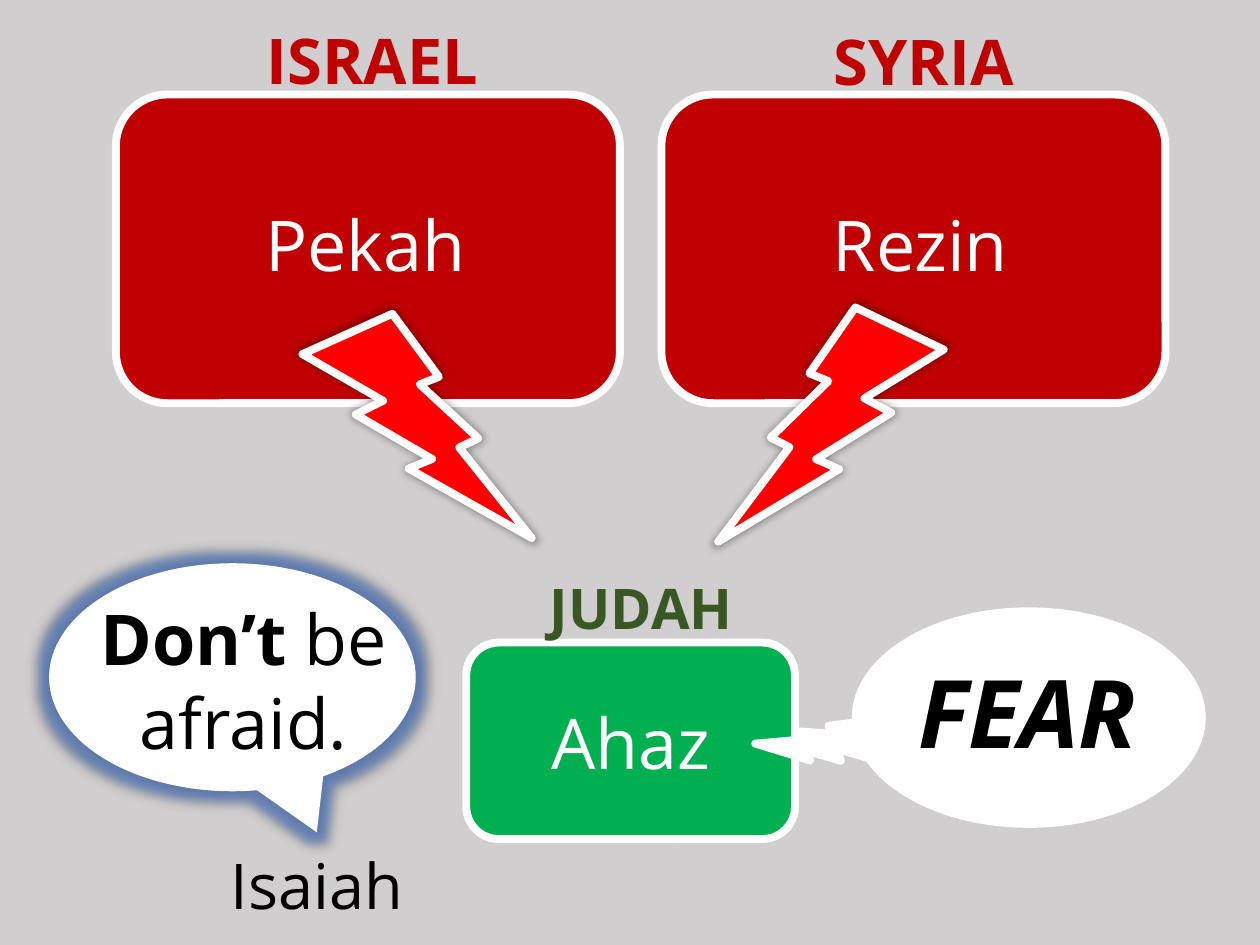
import pptx
import pptx.util
import pptx.dml.color
import pptx.enum.shapes
import pptx.enum.text
import pptx.oxml
import pptx.oxml.ns
from dataclasses import dataclass

Inches = pptx.util.Inches
Pt = pptx.util.Pt
SHAPE = pptx.enum.shapes.MSO_SHAPE


@dataclass(frozen=True)
class Theme:
    font: str = "Open Sans"
    backdrop: str = "D0CECE"
    white: str = "FFFFFF"
    black: str = "000000"
    enemy: str = "C00000"
    bolt: str = "FF0000"
    judah: str = "00B050"
    judah_title: str = "385723"
    glow: str = "4472C4"
    border: float = 4.5
    small: int = 32
    label: int = 36
    name: int = 40
    shout: int = 54


def rgb(value):
    return pptx.dml.color.RGBColor.from_string(value)


def add_run(p, text, *, font, size, color, bold=False, italic=False):
    r = p.add_run()
    r.text = text
    r.font.name = font
    r.font.size = Pt(size)
    r.font.color.rgb = rgb(color)
    r.font.bold = bold
    r.font.italic = italic
    return r


class Board:
    def __init__(self, slide, theme):
        self.slide = slide
        self.theme = theme
        self.shapes = slide.shapes

    def start_group(self):
        self.shapes = self.slide.shapes.add_group_shape().shapes

    def end_group(self):
        self.shapes = self.slide.shapes

    def shape(self, kind, box, fill, border=False, flip=False, rotation=0):
        sp = self.shapes.add_shape(kind, *map(Inches, box))
        sp.shadow.inherit = False
        sp.fill.solid()
        sp.fill.fore_color.rgb = rgb(fill)
        if border:
            sp.line.color.rgb = rgb(self.theme.white)
            sp.line.width = Pt(self.theme.border)
        else:
            sp.line.fill.background()
        sp.rotation = rotation
        if flip:
            sp.element.spPr.find(pptx.oxml.ns.qn("a:xfrm")).set("flipH", "1")
        return sp

    def text(self, box, runs, size, color):
        tf = self.shapes.add_textbox(*map(Inches, box)).text_frame
        tf.word_wrap = True
        tf.auto_size = pptx.enum.text.MSO_AUTO_SIZE.SHAPE_TO_FIT_TEXT
        p = tf.paragraphs[0]
        p.alignment = pptx.enum.text.PP_ALIGN.CENTER
        for text, style in runs:
            add_run(p, text, font=self.theme.font, size=size, color=color, **style)

    def effect(self, sp, tag, color, alpha, **attributes):
        effects = sp.element.spPr.find(pptx.oxml.ns.qn("a:effectLst"))
        settings = " ".join(f'{key}="{value}"' for key, value in attributes.items())
        effects.append(pptx.oxml.parse_xml(
            f'<a:{tag} {pptx.oxml.ns.nsdecls("a")} {settings}>'
            f'<a:srgbClr val="{color}"><a:alpha val="{alpha * 1000}"/></a:srgbClr>'
            f'</a:{tag}>'))

    def soft_shadow(self, sp):
        self.effect(sp, "outerShdw", self.theme.black, 40, blurRad=Pt(5),
                    sx=102000, sy=102000, algn="ctr", rotWithShape=0)

    def kingdom(self, box, fill, king, king_box, title, title_box, title_size, title_color):
        self.start_group()
        self.shape(SHAPE.ROUNDED_RECTANGLE, box, fill, border=True)
        self.text(king_box, [(king, {})], self.theme.name, self.theme.white)
        self.text(title_box, [(title, {"bold": True})], title_size, title_color)
        self.end_group()

    def attack(self, box, flip=False):
        sp = self.shape(SHAPE.LIGHTNING_BOLT, box, self.theme.bolt, border=True, flip=flip)
        self.soft_shadow(sp)

    def fear(self):
        white = self.theme.white
        self.start_group()
        self.shape(SHAPE.OVAL, (6.76, 4.82, 2.81, 1.75), white)
        self.shape(SHAPE.LIGHTNING_BOLT, (6.14, 5.56, 0.74, 0.72), white,
                   border=True, flip=True, rotation=46.3)
        self.end_group()
        self.text((6.94, 5.14, 2.43, 1.01), [("FEAR", {"bold": True, "italic": True})],
                  self.theme.shout, self.theme.black)

    def isaiah(self):
        theme = self.theme
        self.text((1.3, 6.67, 2.43, 0.71), [("Isaiah", {})], theme.label, theme.black)
        sp = self.shape(SHAPE.OVAL_CALLOUT, (0.39, 4.47, 2.91, 1.81), theme.white)
        sp.adjustments[0] = 0.23
        sp.adjustments[1] = 0.68
        self.effect(sp, "glow", theme.glow, 60, rad=Pt(11))
        self.soft_shadow(sp)
        self.text((0.63, 4.68, 2.61, 1.45), [("Don’t ", {"bold": True}), ("be afraid.", {})],
                  theme.name, theme.black)


def main():
    prs = pptx.Presentation()
    prs.slide_width = Inches(10)
    prs.slide_height = Inches(7.5)
    theme = Theme()
    board = Board(prs.slides.add_slide(prs.slide_layouts[6]), theme)

    board.shape(SHAPE.RECTANGLE, (0, 0, 10, 7.5), theme.backdrop)
    board.kingdom((3.7, 5.1, 2.61, 1.56), theme.judah, "Ahaz", (3.79, 5.5, 2.43, 0.77),
                  "JUDAH", (4.18, 4.5, 1.82, 0.64), theme.small, theme.judah_title)
    enemies = [
        (0.92, "Pekah", (1.3, 1.55, 3.2, 0.77), "ISRAEL", (1.95, 0.12, 2.01, 0.71)),
        (5.25, "Rezin", (5.77, 1.55, 3.07, 0.77), "SYRIA", (6.42, 0.13, 1.82, 0.71)),
    ]
    for left, king, king_box, title, title_box in enemies:
        board.kingdom((left, 0.75, 4, 2.45), theme.enemy, king, king_box,
                      title, title_box, theme.label, theme.enemy)
    board.attack((2.4, 2.49, 1.82, 1.78))
    board.attack((5.7, 2.44, 1.79, 1.86), flip=True)
    board.fear()
    board.isaiah()
    prs.save("out.pptx")


if __name__ == "__main__":
    main()
